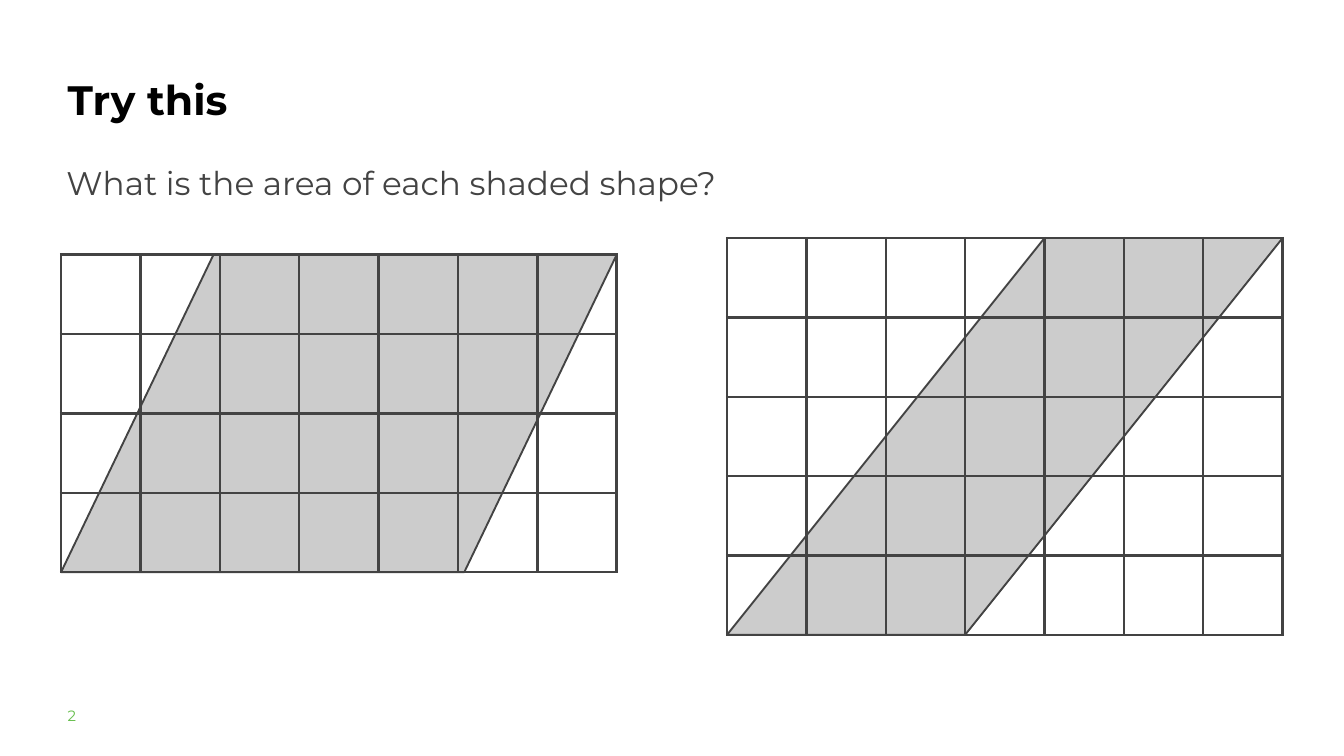
from lxml.etree import SubElement
from pptx import Presentation
from pptx.dml.color import RGBColor
from pptx.enum.shapes import MSO_SHAPE
from pptx.oxml.ns import qn
from pptx.util import Cm, Pt

BLACK = RGBColor(0x00, 0x00, 0x00)
CHARCOAL = RGBColor(0x43, 0x43, 0x43)
SHADE = RGBColor(0xCC, 0xCC, 0xCC)
GREEN = RGBColor(0x65, 0xBE, 0x4B)
WHITE = RGBColor(0xFF, 0xFF, 0xFF)

LEFT = 2.31
SQUARE = 3
COLUMNS = 7


class Worksheet:
    font = "Montserrat"
    outline = Pt(2)
    grid_line = Pt(3)

    def __init__(self, slide):
        self.slide = slide
        self.slide.background.fill.solid()
        self.slide.background.fill.fore_color.rgb = WHITE

    def text(self, wording, left, top, width, height, *, size, color,
             bold=False, spacing=1.0, inset=(0.25, 0.13)):
        box = self.slide.shapes.add_textbox(Cm(left), Cm(top), Cm(width), Cm(height))
        frame = box.text_frame
        frame.word_wrap = True
        frame.margin_left = frame.margin_right = Cm(inset[0])
        frame.margin_top = frame.margin_bottom = Cm(inset[1])
        paragraph = frame.paragraphs[0]
        paragraph.line_spacing = spacing
        run = paragraph.add_run()
        run.text = wording
        run.font.name = self.font
        run.font.size = Pt(size)
        run.font.bold = bold
        run.font.color.rgb = color

    def parallelogram(self, left, top, rows, slant):
        shaded = self.slide.shapes.add_shape(
            MSO_SHAPE.PARALLELOGRAM, Cm(left), Cm(top),
            Cm(COLUMNS * SQUARE), Cm(rows * SQUARE))
        shaded.adjustments[0] = slant
        shaded.shadow.inherit = False
        shaded.fill.solid()
        shaded.fill.fore_color.rgb = SHADE
        shaded.line.color.rgb = CHARCOAL
        shaded.line.width = self.outline

    def border(self, cell):
        properties = cell._tc.get_or_add_tcPr()
        for side in ("a:lnL", "a:lnR", "a:lnT", "a:lnB"):
            line = SubElement(properties, qn(side), w=str(self.grid_line))
            fill = SubElement(line, qn("a:solidFill"))
            SubElement(fill, qn("a:srgbClr"), val=str(CHARCOAL))

    def grid(self, left, top, rows):
        squares = self.slide.shapes.add_table(
            rows, COLUMNS, Cm(left), Cm(top),
            Cm(COLUMNS * SQUARE), Cm(rows * SQUARE)).table
        squares.first_row = False
        squares.horz_banding = False
        for column in squares.columns:
            column.width = Cm(SQUARE)
        for row in squares.rows:
            row.height = Cm(SQUARE)
        for cell in squares.iter_cells():
            self.border(cell)
            cell.fill.background()


def main():
    deck = Presentation()
    deck.slide_width, deck.slide_height = Cm(50.8), Cm(28.58)
    sheet = Worksheet(deck.slides.add_slide(deck.slide_layouts[6]))

    sheet.text("Try this", LEFT, 2.13, 10.06, 2.49,
               size=44, color=BLACK, bold=True, spacing=1.3)
    sheet.text("2", LEFT, 26.37, 2.26, 1.07, size=16, color=GREEN, spacing=1.3)

    problems = [(27.48, 9, 5, 0.8), (LEFT, 9.63, 4, 0.48)]
    for left, top, rows, slant in problems:
        sheet.parallelogram(left, top, rows, slant)
    for left, top, rows, _ in problems:
        sheet.grid(left, top, rows)

    sheet.text("What is the area of each shaded shape?", LEFT, 6.07, 28.55, 1.7,
               size=35, color=CHARCOAL, inset=(0.2, 0.1))

    deck.save("out.pptx")


if __name__ == "__main__":
    main()
